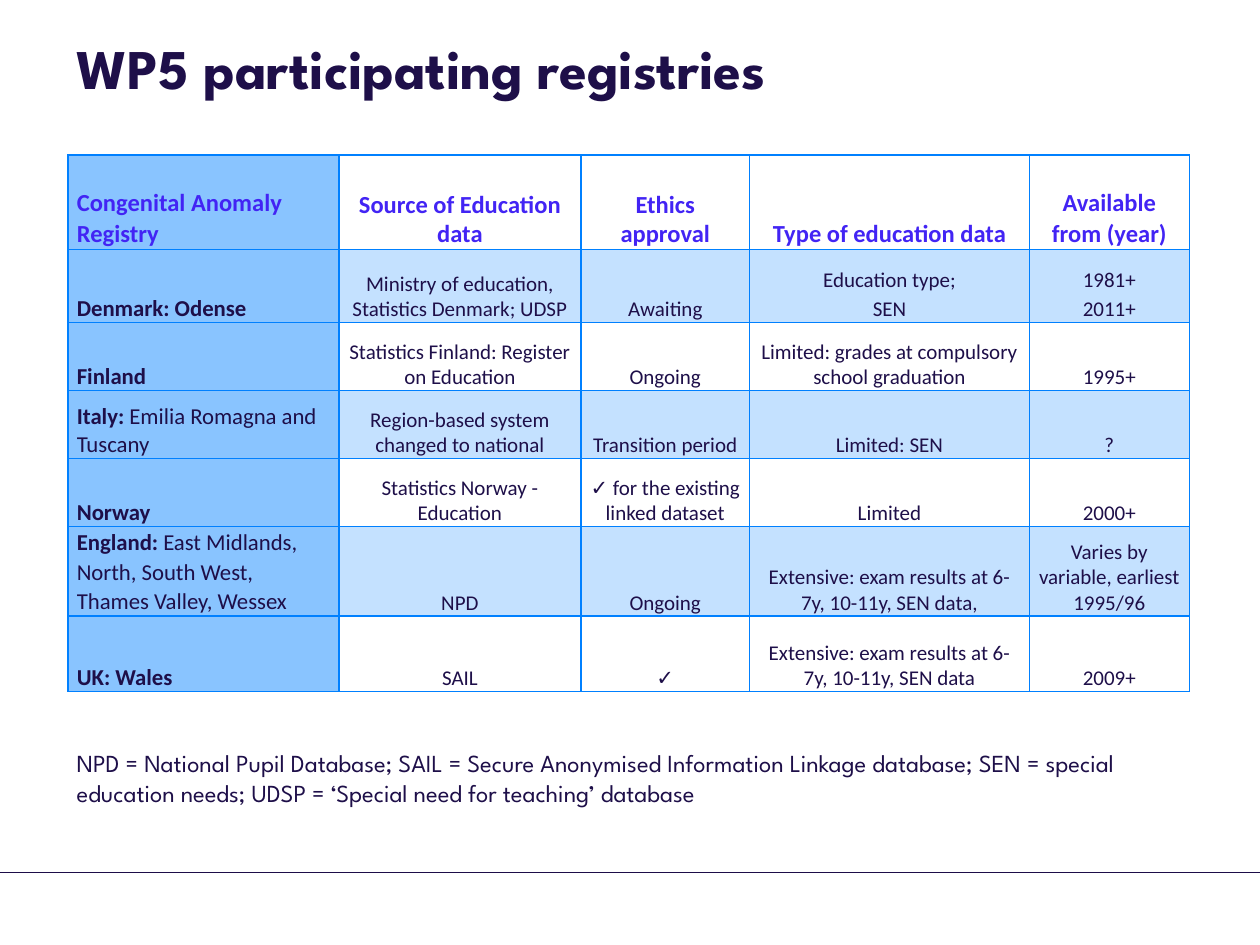
from dataclasses import dataclass

from lxml import etree
from pptx import Presentation
from pptx.dml.color import RGBColor
from pptx.enum import shapes, text
from pptx.oxml import ns
from pptx.util import Inches, Pt


@dataclass(frozen=True)
class Theme:
    ink: str = "1E0F49"
    heading: str = "4224F4"
    border: str = "0080FF"
    rule: str = "1D0D49"
    first_column: str = "89C4FF"
    band: str = "C4E1FF"
    plain: str = "FFFFFF"
    display_font: str = "League Spartan"
    table_font: str = "Calibri"
    title_size: int = 32
    note_size: int = 14
    header_size: int = 14
    registry_size: int = 13
    body_size: int = 12


THEME = Theme()

COLUMN_WIDTHS = [2.15, 1.92, 1.34, 2.22, 1.27]
ROW_HEIGHTS = [0.75, 0.58, 0.54, 0.54, 0.54, 0.71, 0.6]
HEADERS = ["Congenital Anomaly Registry", "Source of Education data", "Ethics approval",
           "Type of education data", "Available from (year)"]
# Country in bold, its regions, then the other four columns; a line break starts a paragraph.
REGISTRIES = [
    ("Denmark: Odense", "", "Ministry of education, Statistics Denmark; UDSP",
     "Awaiting", "Education type;\nSEN", "1981+\n2011+"),
    ("Finland", "", "Statistics Finland: Register on Education",
     "Ongoing", "Limited: grades at compulsory school graduation", "1995+"),
    ("Italy: ", "Emilia Romagna and Tuscany", "Region-based system changed to national",
     "Transition period", "Limited: SEN", "?"),
    ("Norway", "", "Statistics Norway - Education",
     "✓ for the existing linked dataset", "Limited", "2000+"),
    ("England: ", "East Midlands, North, South West, Thames Valley, Wessex", "NPD",
     "Ongoing", "Extensive: exam results at 6-7y, 10-11y, SEN data,",
     "Varies by variable, earliest 1995/96"),
    ("UK: Wales", "", "SAIL", "✓", "Extensive: exam results at 6-7y, 10-11y, SEN data", "2009+"),
]
LOOSE_LINES = 1.07
LOOSE_CELLS = {(0, 0), (0, 4), (5, 0)}


def add_span(para, wording, font, size, color, bold=False):
    span = para.add_run()
    span.text = wording
    span.font.name = font
    span.font.size = Pt(size)
    span.font.bold = bold
    span.font.color.rgb = RGBColor.from_string(color)


def add_text(page, area, wording, size, bold=False, anchor=text.MSO_ANCHOR.TOP):
    box = page.shapes.add_textbox(*map(Inches, area))
    frame = box.text_frame
    frame.word_wrap = True
    frame.vertical_anchor = anchor
    add_span(frame.paragraphs[0], wording, THEME.display_font, size, THEME.ink, bold)


def style_cell(cell, fill):
    cell.fill.solid()
    cell.fill.fore_color.rgb = RGBColor.from_string(fill)
    cell.vertical_anchor = text.MSO_ANCHOR.BOTTOM
    cell.margin_left = cell.margin_right = Inches(0.07)
    cell.margin_top = cell.margin_bottom = 0
    properties = cell._tc.get_or_add_tcPr()
    for index, side in enumerate(("lnL", "lnR", "lnT", "lnB")):
        line = etree.Element(ns.qn(f"a:{side}"), w=str(Pt(1)))
        solid = etree.SubElement(line, ns.qn("a:solidFill"))
        etree.SubElement(solid, ns.qn("a:srgbClr"), val=THEME.border)
        properties.insert(index, line)


def fill_cell(cell, paragraphs, size, color, centred, loose):
    """Write paragraphs, each a list of (wording, bold) spans."""
    for index, spans in enumerate(paragraphs):
        para = cell.text_frame.add_paragraph() if index else cell.text_frame.paragraphs[0]
        para.alignment = text.PP_ALIGN.CENTER if centred else text.PP_ALIGN.LEFT
        if index:
            para.space_before = Pt(2)
        if loose:
            para.line_spacing = LOOSE_LINES
        for wording, bold in spans:
            add_span(para, wording, THEME.table_font, size, color, bold)


def cell_content(row, column):
    """Return the paragraphs, type size and colour of one table cell."""
    if row == 0:
        return [[(HEADERS[column], True)]], THEME.header_size, THEME.heading
    country, regions, *details = REGISTRIES[row - 1]
    if column == 0:
        spans = [(country, True)] + ([(regions, False)] if regions else [])
        return [spans], THEME.registry_size, THEME.ink
    lines = details[column - 1].split("\n")
    return [[(line, False)] for line in lines], THEME.body_size, THEME.ink


def add_registry_table(page, area):
    frame = page.shapes.add_table(len(ROW_HEIGHTS), len(COLUMN_WIDTHS), *map(Inches, area))
    table = frame.table
    for column, width in zip(table.columns, COLUMN_WIDTHS):
        column.width = Inches(width)
    for row, height in zip(table.rows, ROW_HEIGHTS):
        row.height = Inches(height)
    for row in range(len(ROW_HEIGHTS)):
        band = THEME.band if row % 2 else THEME.plain
        for column in range(len(COLUMN_WIDTHS)):
            cell = table.cell(row, column)
            style_cell(cell, band if column else THEME.first_column)
            fill_cell(cell, *cell_content(row, column), centred=column > 0,
                      loose=(row, column) in LOOSE_CELLS)


def add_footer_rule(page, left, top, width):
    rule = page.shapes.add_connector(shapes.MSO_CONNECTOR.STRAIGHT, Inches(left), Inches(top),
                                     Inches(left + width), Inches(top))
    rule.line.color.rgb = RGBColor.from_string(THEME.rule)
    rule.line.width = Pt(0.25)
    etree.SubElement(rule._element.spPr, ns.qn("a:effectLst"))


def build_registries_slide(deck):
    page = deck.slides.add_slide(deck.slide_layouts[6])
    add_footer_rule(page, 0, 6.92, 10)
    add_text(page, (0.51, 0.13, 8.26, 0.81), "WP5 participating registries",
             THEME.title_size, bold=True, anchor=text.MSO_ANCHOR.MIDDLE)
    add_registry_table(page, (0.54, 1.23, sum(COLUMN_WIDTHS), sum(ROW_HEIGHTS)))
    add_text(page, (0.51, 5.89, 8.82, 0.57),
             "NPD = National Pupil Database; SAIL = Secure Anonymised Information Linkage "
             "database; SEN = special education needs; UDSP = ‘Special need for teaching’ "
             "database", THEME.note_size)


def main():
    deck = Presentation()
    deck.slide_width, deck.slide_height = Inches(10), Inches(7.5)
    build_registries_slide(deck)
    deck.save("out.pptx")


if __name__ == "__main__":
    main()
